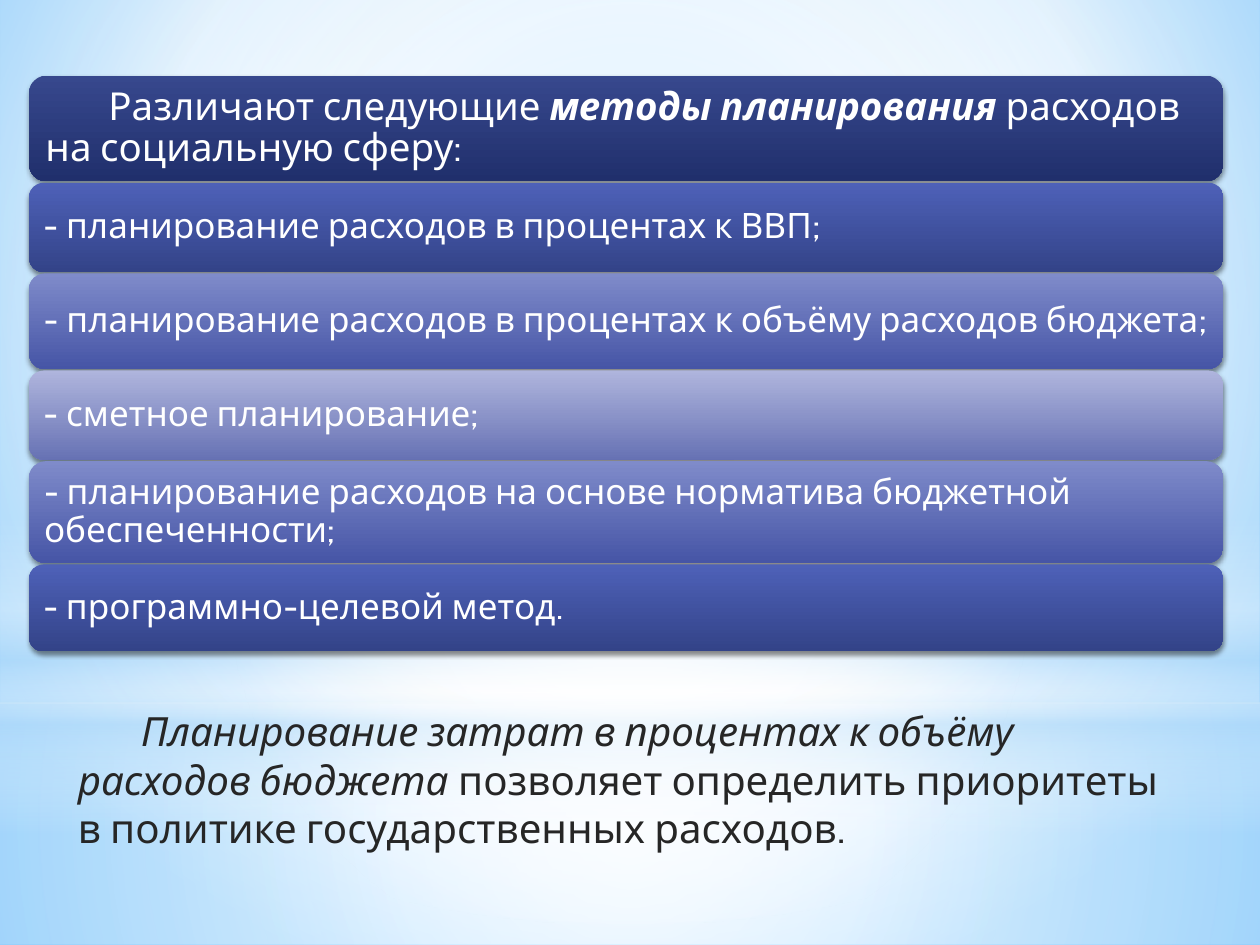
from dataclasses import dataclass
from typing import Optional

from lxml import etree
from pptx import Presentation
from pptx.dml.color import RGBColor
from pptx.enum.shapes import MSO_SHAPE
from pptx.enum.text import MSO_ANCHOR, MSO_AUTO_SIZE, PP_ALIGN
from pptx.oxml.ns import qn
from pptx.util import Inches, Pt

RECT, OVAL, ROUNDED = MSO_SHAPE.RECTANGLE, MSO_SHAPE.OVAL, MSO_SHAPE.ROUNDED_RECTANGLE
MIDDLE, LEFT = MSO_ANCHOR.MIDDLE, PP_ALIGN.LEFT
GROW = MSO_AUTO_SIZE.SHAPE_TO_FIT_TEXT

# The slide is a grid of 100 columns by 75 rows of square cells
COLUMNS, ROWS = 100, 75
CELL = Inches(0.1)
FONT = "Cabin"

WHITE = RGBColor(0xFF, 0xFF, 0xFF)
BLACK = RGBColor(0x00, 0x00, 0x00)
INK = RGBColor(0x26, 0x26, 0x26)
PALE_BLUE = RGBColor(0xB4, 0xDC, 0xFA)
SKY = RGBColor(0x9E, 0xD5, 0xFF)
AZURE = RGBColor(0x5B, 0xB9, 0xFF)
NAVY = (RGBColor(0x37, 0x48, 0x8D), RGBColor(0x20, 0x2F, 0x6C))
BLUE = (RGBColor(0x4E, 0x61, 0xB8), RGBColor(0x33, 0x43, 0x88))
VIOLET = (RGBColor(0x7F, 0x8B, 0xCA), RGBColor(0x46, 0x55, 0xA6))
LILAC = (RGBColor(0xAF, 0xB5, 0xDD), RGBColor(0x67, 0x72, 0xB4))


@dataclass(frozen=True)
class Stop:
    position: int
    color: RGBColor
    alpha: int = 100


@dataclass(frozen=True)
class Gradient:
    """Circular around focus (left, top, right, bottom in %), else vertical."""
    stops: tuple[Stop, ...]
    focus: Optional[tuple[int, int, int, int]] = None


@dataclass(frozen=True)
class Glow:
    kind: MSO_SHAPE
    top: float
    height: float
    gradient: Gradient


@dataclass(frozen=True)
class Phrase:
    text: str
    bold: bool = False
    italic: bool = False


@dataclass(frozen=True)
class Card:
    height: float
    colors: tuple[RGBColor, RGBColor]
    phrases: tuple[Phrase, ...]
    size: int = 20
    inset: float = 0.8


CENTER = (50, 50, 50, 50)
BACKDROP = Gradient((Stop(0, SKY), Stop(60, WHITE), Stop(100, AZURE)), (20, 10, 20, 60))
HORIZON = 55.8
GLOWS = (
    Glow(RECT, HORIZON, ROWS - HORIZON, Gradient(
        (Stop(0, WHITE, 91), Stop(37, WHITE, 76), Stop(100, PALE_BLUE, 79)), CENTER)),
    Glow(RECT, 0, HORIZON, Gradient(
        (Stop(0, WHITE, 89), Stop(48, WHITE, 62), Stop(100, PALE_BLUE, 79)), CENTER)),
    Glow(RECT, 41.2, 25, Gradient(
        (Stop(0, WHITE, 0), Stop(29, WHITE, 30), Stop(45, PALE_BLUE, 40),
         Stop(55, WHITE, 26), Stop(65, PALE_BLUE, 60), Stop(100, WHITE, 0)))),
    Glow(OVAL, 17.5, HORIZON, Gradient((Stop(0, WHITE), Stop(56, WHITE, 0)), CENTER)),
)

CARD_LEFT, CARD_WIDTH, FIRST_CARD_TOP, CARD_GAP = 2.3, 94.8, 6, 0.1
CARDS = (
    Card(8.4, NAVY, (Phrase("\tРазличают следующие "),
                     Phrase("методы планирования", bold=True, italic=True),
                     Phrase(" расходов на социальную сферу:")), size=22, inset=0.9),
    Card(7.1, BLUE, (Phrase("- планирование расходов в процентах к ВВП;"),)),
    Card(7.6, VIOLET, (Phrase("- планирование расходов в процентах к объёму расходов бюджета;"),)),
    Card(7.1, LILAC, (Phrase("- сметное планирование;"),)),
    Card(8.1, VIOLET, (Phrase("- планирование расходов на основе норматива бюджетной обеспеченности;"),)),
    Card(6.9, BLUE, (Phrase("- программно-целевой метод."),)),
)
CONCLUSION = (
    Phrase("\tПланирование затрат в процентах к объёму расходов бюджета", italic=True),
    Phrase(" позволяет определить приоритеты в политике государственных расходов."),
)


def cells(count: float) -> int:
    return round(count * CELL)


def add_color(parent, color: RGBColor, alpha: int) -> None:
    node = etree.SubElement(parent, qn("a:srgbClr"), val=str(color))
    if alpha < 100:
        etree.SubElement(node, qn("a:alpha"), val=str(alpha * 1000))


def paint(fill, properties, gradient: Gradient) -> None:
    """Fill a shape or the background with a gradient."""
    fill.solid()
    node = etree.Element(qn("a:gradFill"), rotWithShape="1")
    stop_list = etree.SubElement(node, qn("a:gsLst"))
    for stop in gradient.stops:
        mark = etree.SubElement(stop_list, qn("a:gs"), pos=str(stop.position * 1000))
        add_color(mark, stop.color, stop.alpha)
    if gradient.focus:
        circle = etree.SubElement(node, qn("a:path"), path="circle")
        sides = {side: str(share * 1000) for side, share in zip("ltrb", gradient.focus)}
        etree.SubElement(circle, qn("a:fillToRect"), **sides)
    else:
        etree.SubElement(node, qn("a:lin"), ang="5400000", scaled="0")
    properties.replace(properties.find(qn("a:solidFill")), node)


def add_panel(slide, kind: MSO_SHAPE, left: float, top: float, width: float,
              height: float, gradient: Gradient):
    panel = slide.shapes.add_shape(kind, *map(cells, (left, top, width, height)))
    panel.line.fill.background()
    panel.shadow.inherit = False
    paint(panel.fill, panel.element.spPr, gradient)
    return panel


def write(paragraph, phrases: tuple[Phrase, ...], size: int, color: RGBColor) -> None:
    paragraph.alignment = LEFT
    for phrase in phrases:
        run = paragraph.add_run()
        run.text = phrase.text
        font = run.font
        font.name, font.size, font.color.rgb = FONT, Pt(size), color
        font.bold, font.italic = phrase.bold, phrase.italic


def add_card(slide, card: Card, top: float) -> None:
    panel = add_panel(slide, ROUNDED, CARD_LEFT, top, CARD_WIDTH, card.height,
                      Gradient((Stop(0, card.colors[0]), Stop(100, card.colors[1]))))
    shadow = etree.SubElement(
        panel.element.spPr.find(qn("a:effectLst")), qn("a:outerShdw"),
        blurRad=str(Pt(3.1)), dist=str(Pt(1.8)), dir="5400000", rotWithShape="0")
    add_color(shadow, BLACK, 45)
    frame = panel.text_frame
    frame.word_wrap, frame.vertical_anchor = True, MIDDLE
    frame.margin_left = frame.margin_right = cells(card.inset)
    frame.margin_top = frame.margin_bottom = cells(card.inset)
    frame.paragraphs[0].line_spacing = 0.9
    write(frame.paragraphs[0], card.phrases, card.size, WHITE)


def main() -> None:
    deck = Presentation()
    deck.slide_width, deck.slide_height = cells(COLUMNS), cells(ROWS)
    slide = deck.slides.add_slide(deck.slide_layouts[6])

    # Sky backdrop with soft glows
    background_fill = slide.background.fill
    background_fill.solid()
    paint(background_fill, next(slide.element.iter(qn("p:bgPr"))), BACKDROP)
    for glow in GLOWS:
        add_panel(slide, glow.kind, 0, glow.top, COLUMNS, glow.height, glow.gradient)

    # Stack of planning methods
    top = FIRST_CARD_TOP
    for card in CARDS:
        add_card(slide, card, top)
        top += card.height + CARD_GAP

    # Conclusion
    conclusion = slide.shapes.add_textbox(*map(cells, (5.2, 55.6, 89, 12.6)))
    conclusion.text_frame.word_wrap = True
    conclusion.text_frame.auto_size = GROW
    write(conclusion.text_frame.paragraphs[0], CONCLUSION, 23, INK)

    deck.save("out.pptx")


if __name__ == "__main__":
    main()
